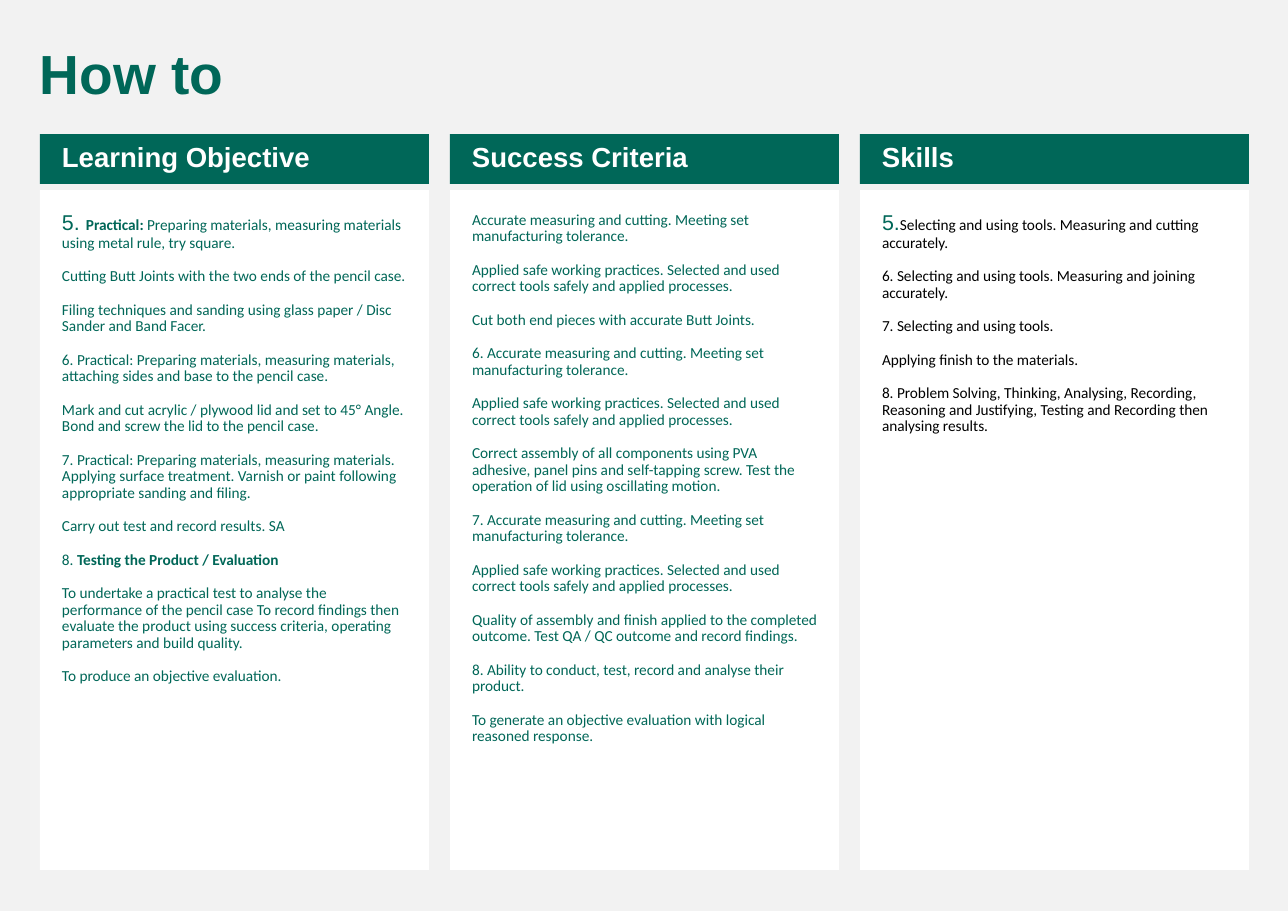
from dataclasses import dataclass

from pptx import Presentation
from pptx.dml.color import RGBColor
from pptx.enum.shapes import MSO_SHAPE
from pptx.enum.text import MSO_ANCHOR, MSO_AUTO_SIZE, PP_ALIGN
from pptx.oxml.xmlchemy import OxmlElement
from pptx.util import Emu, Pt

RECTANGLE = MSO_SHAPE.RECTANGLE
TOP, MIDDLE, BOTTOM = MSO_ANCHOR.TOP, MSO_ANCHOR.MIDDLE, MSO_ANCHOR.BOTTOM
LEFT = PP_ALIGN.LEFT
NO_AUTOFIT = MSO_AUTO_SIZE.NONE

EMU_PER_PX = 8298
COMPARISON_LAYOUT = 4
LIST_PLACEHOLDERS = (1, 2, 4)
SPARE_PLACEHOLDER = 3


@dataclass(frozen=True)
class Theme:
    page: str = "F2F2F2"
    green: str = "006758"
    white: str = "FFFFFF"
    black: str = "000000"
    heading_font: str = "Arial"
    body_font: str = "Calibri"
    title_size: int = 36
    heading_size: int = 18
    number_size: int = 14
    body_size: int = 10
    line_spacing: float = 0.9
    paragraph_gap: int = 11


THEME = Theme()


@dataclass(frozen=True)
class Box:
    left: int
    top: int
    width: int
    height: int


@dataclass(frozen=True)
class Span:
    text: str
    bold: bool = False
    number: bool = False


@dataclass(frozen=True)
class Column:
    heading: str
    color: str
    paragraphs: tuple[str | tuple[Span, ...], ...]


# Layout
PAGE_WIDTH, PAGE_HEIGHT = 1288, 911
TITLE_BOX = Box(29, 40, 1221, 72)
COLUMN_LEFT, COLUMN_STEP, COLUMN_WIDTH = 40, 410, 389
HEADING_TOP, HEADING_HEIGHT = 134, 50
LIST_TOP, LIST_HEIGHT = 190, 680
TITLE_INSETS = (11, 6, 11, 6)
HEADING_INSETS = (22, 6, 11, 6)
LIST_INSETS = (22, 22, 22, 22)

# Wording
TOLERANCE = "Accurate measuring and cutting. Meeting set manufacturing tolerance."
SAFETY = ("Applied safe working practices. Selected and used correct tools "
          "safely and applied processes.")

COLUMNS = (
    Column("Learning Objective", THEME.green, (
        (Span("5. ", number=True), Span("Practical:", bold=True),
         Span(" Preparing materials, measuring materials using metal rule, "
              "try square.")),
        "Cutting Butt Joints with the two ends of the pencil case.",
        "Filing techniques and sanding using glass paper / Disc Sander and "
        "Band Facer.",
        "6. Practical: Preparing materials, measuring materials, attaching "
        "sides and base to the pencil case.",
        "Mark and cut acrylic / plywood lid and set to 45° Angle. Bond and "
        "screw the lid to the pencil case.",
        "7. Practical: Preparing materials, measuring materials. Applying "
        "surface treatment. Varnish or paint following appropriate sanding "
        "and filing.",
        "Carry out test and record results. SA",
        (Span("8. "), Span("Testing the Product / Evaluation", bold=True)),
        "To undertake a practical test to analyse the performance of the "
        "pencil case To record findings then evaluate the product using "
        "success criteria, operating parameters and build quality.",
        "To produce an objective evaluation.",
    )),
    Column("Success Criteria", THEME.green, (
        TOLERANCE,
        SAFETY,
        "Cut both end pieces with accurate Butt Joints.",
        f"6. {TOLERANCE}",
        SAFETY,
        "Correct assembly of all components using PVA adhesive, panel pins "
        "and self-tapping screw. Test the operation of lid using oscillating "
        "motion.",
        f"7. {TOLERANCE}",
        SAFETY,
        "Quality of assembly and finish applied to the completed outcome. "
        "Test QA / QC outcome and record findings.",
        "8. Ability to conduct, test, record and analyse their product.",
        "To generate an objective evaluation with logical reasoned response.",
    )),
    Column("Skills", THEME.black, (
        (Span("5.", number=True),
         Span("Selecting and using tools. Measuring and cutting accurately.")),
        "6. Selecting and using tools. Measuring and joining accurately.",
        "7. Selecting and using tools.",
        "Applying finish to the materials.",
        "8. Problem Solving, Thinking, Analysing, Recording, Reasoning and "
        "Justifying, Testing and Recording then analysing results.",
    )),
)


def px(length: int) -> Emu:
    return Emu(length * EMU_PER_PX)


def place(shape, box: Box) -> None:
    shape.left, shape.top = px(box.left), px(box.top)
    shape.width, shape.height = px(box.width), px(box.height)


def fill_shape(shape, color: str) -> None:
    shape.fill.solid()
    shape.fill.fore_color.rgb = RGBColor.from_string(color)


def set_frame(shape, insets: tuple[int, int, int, int], anchor) -> None:
    frame = shape.text_frame
    frame.word_wrap = True
    frame.auto_size = NO_AUTOFIT
    frame.vertical_anchor = anchor
    (frame.margin_left, frame.margin_top,
     frame.margin_right, frame.margin_bottom) = map(px, insets)


def format_paragraph(para, first: bool) -> None:
    properties = para._p.get_or_add_pPr()
    properties.set("marL", "0")
    properties.set("indent", "0")
    properties.append(OxmlElement("a:buNone"))
    para.alignment = LEFT
    para.line_spacing = THEME.line_spacing
    para.space_before = Pt(0 if first else THEME.paragraph_gap)


def add_text(para, text: str, *, size: int, color: str, font: str,
             bold: bool) -> None:
    span = para.add_run()
    span.text = text
    span.font.size = Pt(size)
    span.font.name = font
    span.font.bold = bold
    span.font.color.rgb = RGBColor.from_string(color)


def write_heading(shape, text: str, size: int, color: str) -> None:
    para = shape.text_frame.paragraphs[0]
    format_paragraph(para, first=True)
    add_text(para, text, size=size, color=color, font=THEME.heading_font,
             bold=True)


def write_list(shape, column: Column) -> None:
    frame = shape.text_frame
    for index, content in enumerate(column.paragraphs):
        para = frame.add_paragraph() if index else frame.paragraphs[0]
        format_paragraph(para, first=index == 0)
        spans = (Span(content),) if isinstance(content, str) else content
        for span in spans:
            if span.number:
                add_text(para, span.text, size=THEME.number_size,
                         color=THEME.green, font=THEME.heading_font, bold=False)
            else:
                add_text(para, span.text, size=THEME.body_size,
                         color=column.color, font=THEME.body_font,
                         bold=span.bold)


def draw_column(page, column: Column, placeholder, left: int) -> None:
    place(placeholder, Box(left, LIST_TOP, COLUMN_WIDTH, LIST_HEIGHT))
    fill_shape(placeholder, THEME.white)
    set_frame(placeholder, LIST_INSETS, TOP)
    write_list(placeholder, column)

    heading = page.shapes.add_shape(
        RECTANGLE, px(left), px(HEADING_TOP), px(COLUMN_WIDTH), px(HEADING_HEIGHT))
    heading.shadow.inherit = False
    heading.line.fill.background()
    fill_shape(heading, THEME.green)
    set_frame(heading, HEADING_INSETS, MIDDLE)
    write_heading(heading, column.heading, THEME.heading_size, THEME.white)


def main() -> None:
    deck = Presentation()
    deck.slide_width, deck.slide_height = px(PAGE_WIDTH), px(PAGE_HEIGHT)
    page = deck.slides.add_slide(deck.slide_layouts[COMPARISON_LAYOUT])
    fill_shape(page.background, THEME.page)
    placeholders = {item.placeholder_format.idx: item for item in page.placeholders}
    spare = placeholders[SPARE_PLACEHOLDER].element
    spare.getparent().remove(spare)

    # Title
    title = page.shapes.title
    place(title, TITLE_BOX)
    set_frame(title, TITLE_INSETS, BOTTOM)
    write_heading(title, "How to", THEME.title_size, THEME.green)

    # Columns
    for index, (column, slot) in enumerate(zip(COLUMNS, LIST_PLACEHOLDERS)):
        draw_column(page, column, placeholders[slot],
                    COLUMN_LEFT + index * COLUMN_STEP)

    deck.save("out.pptx")


if __name__ == "__main__":
    main()
